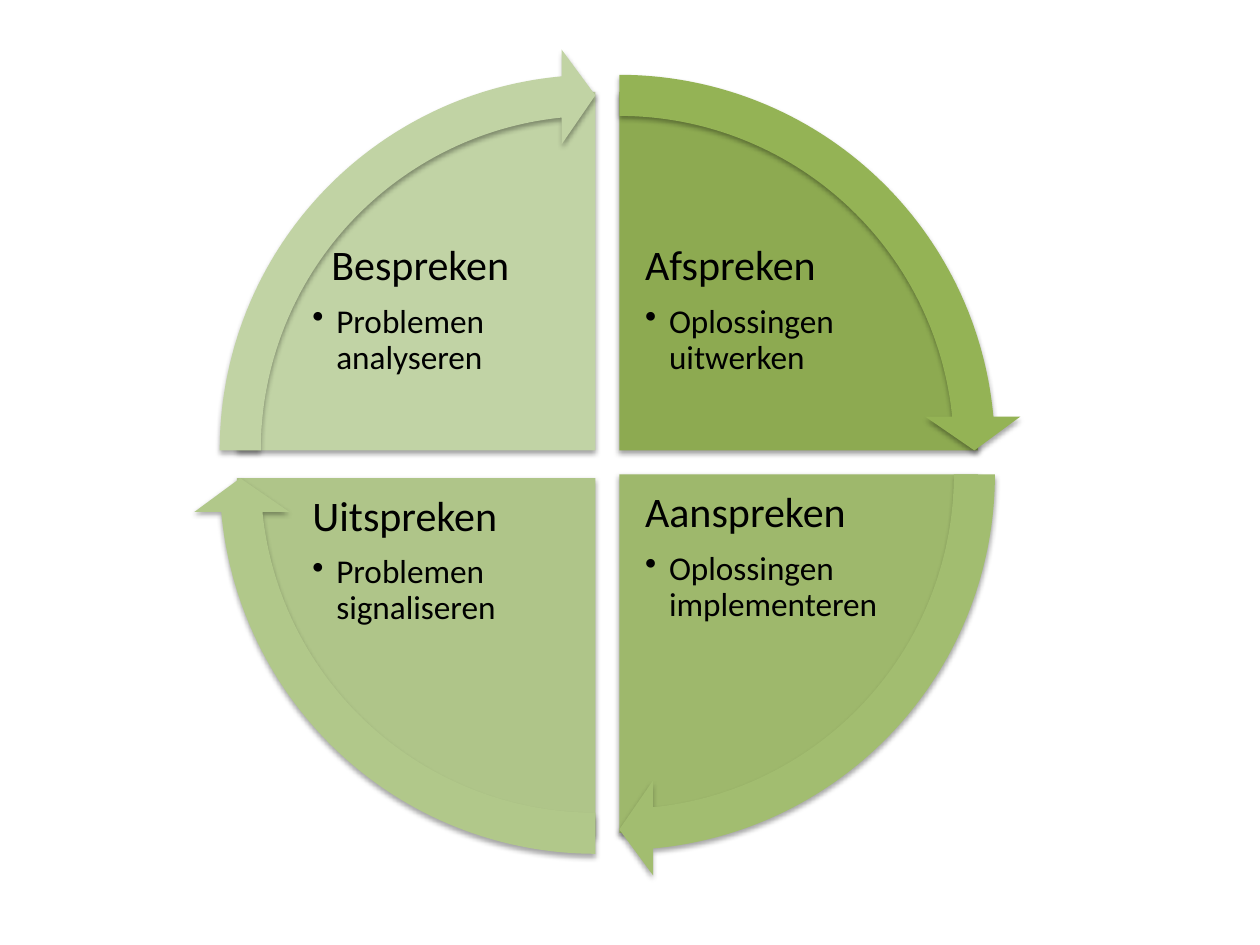
"""Build a slide with a four-quarter cycle of Dutch discussion steps."""
from lxml.etree import SubElement
from pptx import Presentation
from pptx.dml.color import RGBColor
from pptx.enum.shapes import MSO_SHAPE as Preset
from pptx.enum.text import MSO_ANCHOR as Anchor
from pptx.oxml.ns import qn
from pptx.util import Inches, Pt


def color(value):
    return RGBColor.from_string(value)


def add_quarter(preset, left, top, size, adjustments, fill, distance, opacity):
    shape = slide.shapes.add_shape(
        preset, Inches(left), Inches(top), Inches(size), Inches(size))
    for index, value in enumerate(adjustments):
        shape.adjustments[index] = value
    shape.fill.solid()
    shape.fill.fore_color.rgb = color(fill)
    shape.line.fill.background()
    shape.shadow.inherit = False
    effects = shape._element.spPr.find(qn("a:effectLst"))
    shadow = SubElement(effects, qn("a:outerShdw"), blurRad=str(Pt(3.1)),
                        dist=str(Pt(distance)), dir="5400000", rotWithShape="0")
    black = SubElement(shadow, qn("a:srgbClr"), val="000000")
    SubElement(black, qn("a:alpha"), val=str(opacity * 1000))


presentation = Presentation()
presentation.slide_width = Inches(10)
presentation.slide_height = Inches(7.5)
slide = presentation.slides.add_slide(presentation.slide_layouts[6])

PIE_SIZE, ARROW_SIZE, QUARTER, SWEEP = 5.69, 6.39, 54, 50.725
ARROW_OFFSET = (ARROW_SIZE - PIE_SIZE) / 2

quarters = [
    ("Afspreken", "Oplossingen uitwerken", 0, 2.07, 0.73, 5.09, 1.91, 162, "8DAA51", "94B355"),
    ("Aanspreken", "Oplossingen implementeren", 0, 2.07, 0.92, 5.09, 3.87, 0, "9EB86C", "A2BD70"),
    ("Uitspreken", "Problemen signaliseren", 0, 1.88, 0.95, 2.45, 3.9, 54, "AFC589", "B1C88A"),
    ("Bespreken", "Problemen analyseren", 0.15, 1.88, 0.73, 2.45, 1.91, 108, "C1D3A5", "C1D3A4"),
]

for heading, detail, indent, left, top, text_left, text_top, start, pie_fill, _ in quarters:
    end = (start + QUARTER) % 216
    add_quarter(Preset.PIE, left, top, PIE_SIZE, (start, end), pie_fill, 1.6, 38)

    box = slide.shapes.add_textbox(
        Inches(text_left), Inches(text_top), Inches(2.1), Inches(1.56))
    frame = box.text_frame
    frame_format = {"word_wrap": True, "vertical_anchor": Anchor.TOP}
    for side in ("left", "top", "right", "bottom"):
        frame_format[f"margin_{side}"] = Inches(0.03)
    for name, value in frame_format.items():
        setattr(frame, name, value)

    title, bullet = frame.paragraphs[0], frame.add_paragraph()
    title_properties = title._p.get_or_add_pPr()
    title_properties.set("marL", str(Inches(indent)))
    bullet.level = 1
    bullet_properties = bullet._p.get_or_add_pPr()
    bullet_properties.set("marL", str(Inches(0.19)))
    bullet_properties.set("indent", str(Inches(-0.19)))
    SubElement(bullet_properties, qn("a:buChar"), char="•")

    for paragraph, text, size, space in ((title, heading, 24, 8.4), (bullet, detail, 19, 2.85)):
        paragraph.line_spacing = 0.9
        paragraph.space_after = Pt(space)
        run = paragraph.add_run()
        run.text = text
        for name, value in {"name": "Calibri", "size": Pt(size)}.items():
            setattr(run.font, name, value)
        run.font.color.rgb = color("000000")

for *_, left, top, text_left, text_top, start, pie_fill, arrow_fill in quarters:
    adjustments = (0.051, 3.275, start + SWEEP, start, 0.059)
    add_quarter(Preset.CIRCULAR_ARROW, left - ARROW_OFFSET, top - ARROW_OFFSET,
                ARROW_SIZE, adjustments, arrow_fill, 1.8, 35)

presentation.save("out.pptx")
